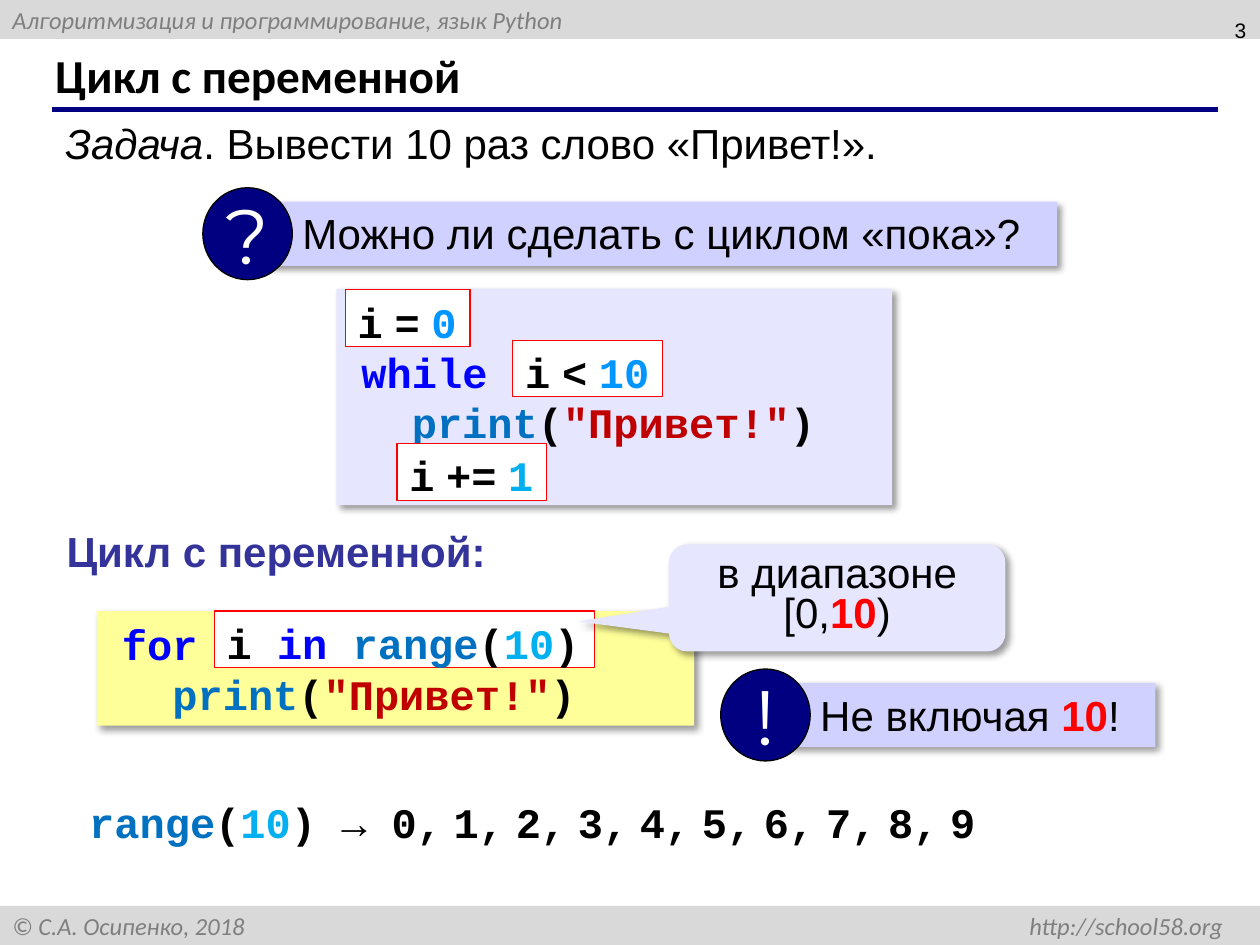
from lxml.etree import SubElement
from pptx import Presentation
from pptx.dml.color import RGBColor
from pptx.enum.shapes import MSO_CONNECTOR, MSO_SHAPE
from pptx.enum.text import MSO_ANCHOR, PP_ALIGN
from pptx.oxml.ns import qn
from pptx.util import Inches, Pt

COLORS = {
    "black": "000000", "white": "FFFFFF", "bar": "D9D9D9", "gray": "7F7F7F",
    "navy": "000080", "heading": "333399", "lilac": "D1D1FF", "pale": "E6E6FF",
    "yellow": "FFFF99", "red": "FF0000", "keyword": "0000FF", "function": "0070C0",
    "string": "C00000", "number": "0095FF", "cyan": "00B0F0",
}


def add_box(parent, kind, at, fill=None, line=None, shadow=False):
    left, top, width, height = map(Inches, at)
    if kind is None:
        return parent.add_textbox(left, top, width, height)
    box = parent.add_shape(kind, left, top, width, height)
    box.fill.solid()
    box.fill.fore_color.rgb = RGBColor.from_string(COLORS[fill])
    if line:
        box.line.color.rgb = RGBColor.from_string(COLORS[line])
        box.line.width = Pt(0.75)
    else:
        box.line.fill.background()
    box.shadow.inherit = False
    if shadow:
        effects = box._element.spPr.find(qn("a:effectLst"))
        outer = SubElement(effects, qn("a:outerShdw"), blurRad=str(Pt(4)), dist=str(Pt(3)),
                           dir="2700000", algn="tl", rotWithShape="0")
        tint = SubElement(outer, qn("a:srgbClr"), val=COLORS["black"])
        SubElement(tint, qn("a:alpha"), val="40000")
    return box


def write(box, lines, font="Arial", size=24, bold=False, italic=False, align=PP_ALIGN.LEFT,
          anchor=MSO_ANCHOR.TOP, wrap=True, spacing=None, indents=(), tab=None):
    frame = box.text_frame
    frame.word_wrap = wrap
    frame.vertical_anchor = anchor
    for index, runs in enumerate(lines):
        paragraph = frame.paragraphs[0] if index == 0 else frame.add_paragraph()
        properties = paragraph._p.get_or_add_pPr()
        if indents:
            properties.set("marL", "0")
            properties.set("indent", str(Inches(indents[index])))
        if tab and "\t" in "".join(run[0] for run in runs):
            position, side = tab
            stops = SubElement(properties, qn("a:tabLst"))
            SubElement(stops, qn("a:tab"), pos=str(Inches(position)), algn=side)
        paragraph.alignment = align
        if spacing:
            paragraph.line_spacing = spacing
        paragraph.font.name = font
        paragraph.font.size = Pt(size)
        paragraph.font.bold = bold
        paragraph.font.italic = italic
        for text, color, *style in runs:
            run = paragraph.add_run()
            run.text = text
            run.font.color.rgb = RGBColor.from_string(COLORS[color])
            if "bold" in style:
                run.font.bold = True
            if "italic" in style:
                run.font.italic = True
            if "narrow" in style:
                run.font.name = "Arial"


presentation = Presentation()
presentation.slide_width = Inches(10)
presentation.slide_height = Inches(7.5)
slide = presentation.slides.add_slide(presentation.slide_layouts[6])
shapes = slide.shapes

for top, caption in [
    (0, "Алгоритмизация и программирование, язык Python"),
    (7.19, "© С.А. Осипенко, 2018\thttp://school58.org"),
]:
    bar = add_box(shapes, MSO_SHAPE.RECTANGLE, (0, top, 10, 0.31), "bar")
    write(bar, [[(caption, "gray")]], "Calibri", 14, italic=True,
          anchor=MSO_ANCHOR.MIDDLE, tab=(9.61, "r"))

title_rule = shapes.add_connector(MSO_CONNECTOR.STRAIGHT, Inches(0.41), Inches(0.87),
                                  Inches(9.67), Inches(0.87))
title_rule.line.color.rgb = RGBColor.from_string(COLORS["navy"])
title_rule.line.width = Pt(3)
SubElement(title_rule._element.spPr, qn("a:effectLst"))

title = add_box(shapes, None, (0.34, 0.33, 9.16, 0.52))
write(title, [[("Цикл с переменной", "black")]], "Calibri", 27, bold=True,
      anchor=MSO_ANCHOR.MIDDLE)
page_number = add_box(shapes, None, (7.66, -0.02, 2.33, 0.52))
write(page_number, [[("3", "black")]], size=12, align=PP_ALIGN.RIGHT, anchor=MSO_ANCHOR.MIDDLE)
task = add_box(shapes, None, (0.42, 0.88, 9.27, 0.51))
write(task, [[("Задача", "black", "italic"), (". Вывести 10 раз слово «Привет!».", "black")]])

print_line = [("print", "function"), ("(", "black"), ('"Привет!"', "string"), (")", "black")]
for at, fill, keyword, colon in [
    ((2.67, 2.29, 4.41, 1.72), "pale", "while", 2.5),
    ((0.77, 4.85, 4.74, 0.91), "yellow", "for", 3.9),
]:
    code = add_box(shapes, MSO_SHAPE.RECTANGLE, at, fill, shadow=True)
    write(code, [[(keyword, "keyword"), ("\t:", "black")], print_line], "Courier New",
          bold=True, anchor=MSO_ANCHOR.MIDDLE, spacing=Pt(28.6), indents=(0.1, 0.5),
          tab=(colon, "l"))

space = (" ", "black", "narrow")
for at, runs in [
    ((2.74, 2.3, 0.99, 0.45), [("i", "black"), space, ("=", "black"), space, ("0", "number")]),
    ((4.07, 2.7, 1.19, 0.45), [("i", "black"), space, ("<", "black"), space, ("10", "number")]),
    ((3.15, 3.52, 1.19, 0.45), [("i", "black"), space, ("+=", "black"), space, ("1", "cyan")]),
    ((1.7, 4.85, 3.02, 0.45), [("i ", "black"), ("in ", "keyword"), ("range", "function"),
                               ("(", "black"), ("10", "cyan"), (")", "black")]),
]:
    fragment = add_box(shapes, MSO_SHAPE.RECTANGLE, at, "white", "red")
    fragment.text_frame.margin_bottom = 0
    write(fragment, [runs], "Courier New", bold=True, wrap=False)

callout = add_box(shapes, MSO_SHAPE.ROUNDED_RECTANGULAR_CALLOUT, (5.31, 4.32, 2.67, 0.85),
                  "pale", shadow=True)
for index, value in enumerate((-0.77, 0.22, 0.17)):
    callout.adjustments[index] = value
write(callout, [[("в диапазоне [0,", "black"), ("10", "red", "bold"), (")", "black")]],
      align=PP_ALIGN.CENTER, spacing=0.8)

subtitle = add_box(shapes, None, (0.43, 4.12, 3.56, 0.5))
write(subtitle, [[("Цикл с переменной:", "heading")]], bold=True, wrap=False)

for left, top, width, mark, runs in [
    (1.61, 1.49, 6.27, "?", [("Можно ли сделать с циклом «пока»?", "black")]),
    (5.72, 5.31, 2.94, "!", [("Не включая ", "black"), ("10", "red", "bold"), ("!", "black")]),
]:
    note = shapes.add_group_shape().shapes
    banner = add_box(note, MSO_SHAPE.RECTANGLE, (left + 0.51, top + 0.11, width, 0.51),
                     "lilac", shadow=True)
    banner.text_frame.margin_left = Inches(0.28)
    write(banner, [runs])
    badge = add_box(note, MSO_SHAPE.OVAL, (left, top, 0.71, 0.73), "navy", "black")
    write(badge, [[(mark, "white")]], "Montserrat", 44, align=PP_ALIGN.CENTER,
          anchor=MSO_ANCHOR.MIDDLE, wrap=False)

result = [("range", "function"), ("(", "black"), ("10", "cyan"), (") → 0", "black")]
for number in range(1, 10):
    result += [(",", "black"), space, (str(number), "black")]
range_values = add_box(shapes, None, (0.61, 6.27, 7.42, 0.51))
write(range_values, [result], "Courier New", bold=True)

presentation.save("out.pptx")
